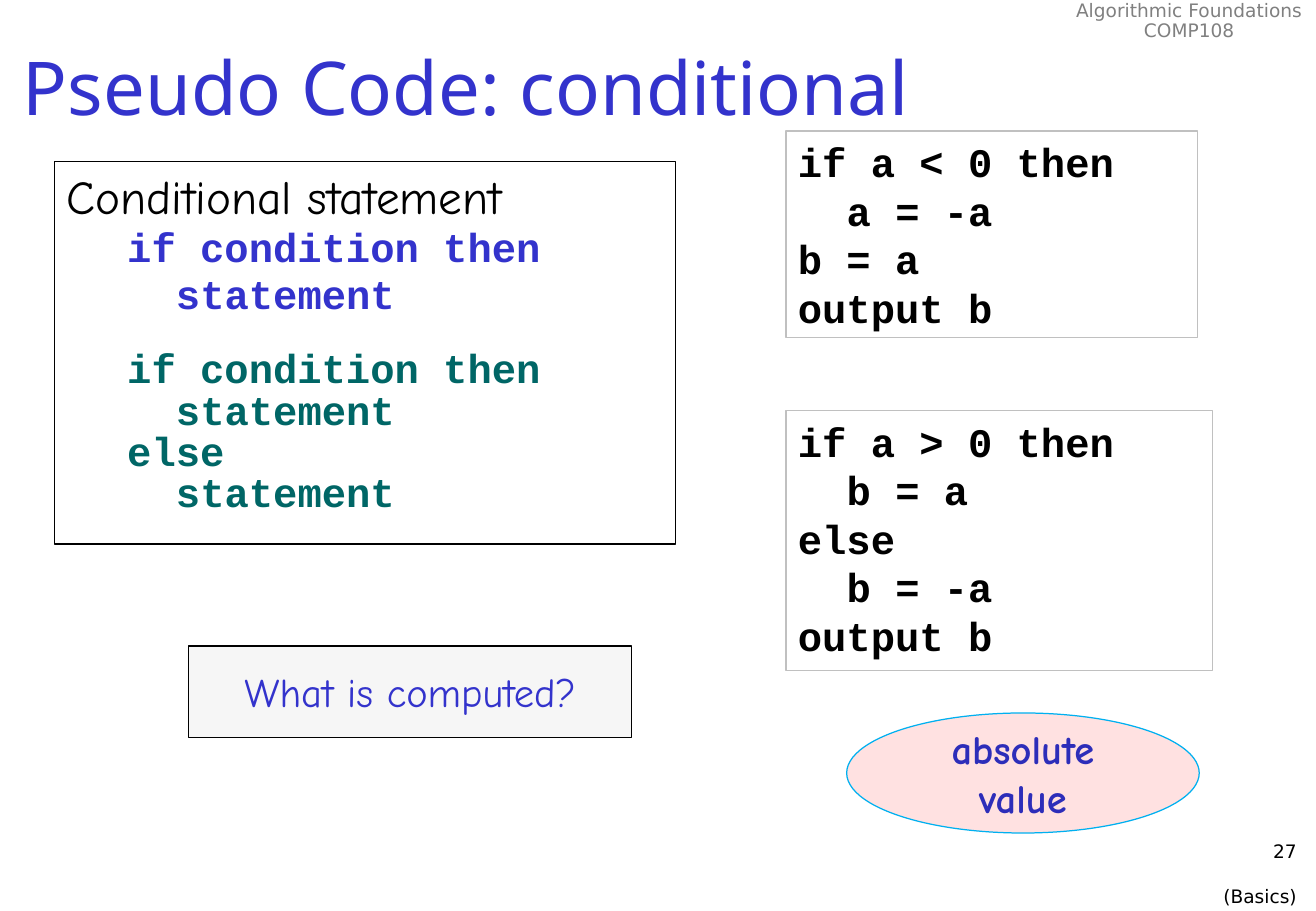
from pptx import Presentation
from pptx import util as u
from pptx.dml.color import RGBColor
from pptx.enum import shapes, text

ALIGN, ANCHOR = text.PP_ALIGN, text.MSO_ANCHOR
RECT, OVAL = shapes.MSO_SHAPE.RECTANGLE, shapes.MSO_SHAPE.OVAL
MONO, COMIC, SANS = "Courier New", "Comic Neue", "DejaVu Sans"
BLACK, BLUE, GREEN, GREY = "000000", "3333CC", "006666", "C0C0C0"
STEP = 1.02  # one level of code: two characters of 24 pt


def rgb(value):
    return RGBColor.from_string(value)


def write(tf, line, font, size, color, bold=False, align=ALIGN.LEFT,
          indent=0, spacing=None, before=0, after=0):
    p = tf.paragraphs[0]
    if p.runs:
        p = tf.add_paragraph()
    p.alignment = align
    p.space_before, p.space_after = u.Pt(before), u.Pt(after)
    if spacing:
        p.line_spacing = spacing
    if indent:
        p._p.get_or_add_pPr().set("marL", str(u.Cm(indent)))
    r = p.add_run()
    r.text = line
    r.font.name, r.font.size, r.font.bold = font, u.Pt(size), bold
    r.font.color.rgb = rgb(color)


prs = Presentation()
prs.slide_width, prs.slide_height = u.Cm(27.51), u.Cm(19.05)
s = prs.slides.add_slide(prs.slide_layouts[6])

# Text boxes: course header, page number, title
frames = {}
for name, box, wrap in [
    ("header", (22.22, -0.1, 5.28, 1.09), False),
    ("page", (21.62, 17.45, 5.74, 1.27), True),
    ("title", (0.23, 0.2, 27.28, 3.18), True),
]:
    tf = s.shapes.add_textbox(*map(u.Cm, box)).text_frame
    tf.word_wrap = wrap
    frames[name] = tf

for line in ("Algorithmic Foundations", "COMP108"):
    write(frames["header"], line, SANS, 11, "808080", align=ALIGN.CENTER, spacing=0.9)
write(frames["page"], "27", SANS, 11, BLACK, align=ALIGN.RIGHT)
write(frames["page"], "(Basics)", SANS, 11, BLACK, align=ALIGN.RIGHT, before=13)
frames["title"].vertical_anchor = ANCHOR.MIDDLE
write(frames["title"], "Pseudo Code: conditional", "Noto Sans", 44, BLUE)

# Outlined shapes
for name, kind, box, fill, line, anchor in [
    ("syntax", RECT, (1.14, 3.38, 12.98, 8), None, BLACK, ANCHOR.TOP),
    ("if else", RECT, (16.43, 8.59, 8.92, 5.44), None, GREY, ANCHOR.TOP),
    ("if", RECT, (16.43, 2.74, 8.61, 4.32), None, GREY, ANCHOR.TOP),
    ("question", RECT, (3.94, 13.51, 9.27, 1.91), "F6F6F6", BLACK, ANCHOR.MIDDLE),
    ("answer", OVAL, (17.7, 14.91, 7.37, 2.51), "FFE1E1", "00B0F0", ANCHOR.MIDDLE),
]:
    sp = s.shapes.add_shape(kind, *map(u.Cm, box))
    sp.shadow.inherit = False
    if fill:
        sp.fill.solid()
        sp.fill.fore_color.rgb = rgb(fill)
    else:
        sp.fill.background()
    sp.line.color.rgb = rgb(line)
    sp.line.width = u.Pt(0.75)
    tf = sp.text_frame
    tf.word_wrap = True
    tf.vertical_anchor = anchor
    frames[name] = tf

# Syntax of the conditional statement
write(frames["syntax"], "Conditional statement", COMIC, 28, BLACK, before=3, after=3)
for line, level, color, spacing, before, after in [
    ("if condition then", 0, BLUE, 0.85, 0, 0),
    ("statement", 1, BLUE, 0.9, 2.4, 19.2),
    ("if condition then", 0, GREEN, 0.85, 0, 0),
    ("statement", 1, GREEN, 0.85, 0, 0),
    ("else", 0, GREEN, 0.85, 0, 0),
    ("statement", 1, GREEN, 0.85, 0, 0),
]:
    write(frames["syntax"], line, MONO, 24, color, bold=True, spacing=spacing,
          indent=1.27 + level * STEP, before=before, after=after)

# Code examples
examples = {
    "if": [("if a < 0 then", 0), ("a = -a", 1), ("b = a", 0), ("output b", 0)],
    "if else": [("if a > 0 then", 0), ("b = a", 1), ("else", 0),
                ("b = -a", 1), ("output b", 0)],
}
for name, lines in examples.items():
    for line, level in lines:
        write(frames[name], line, MONO, 24, BLACK, bold=True, indent=level * STEP)

# Question and answer
write(frames["question"], "What is computed?", COMIC, 24, BLUE,
      align=ALIGN.CENTER, before=4.8)
write(frames["answer"], "absolute value", COMIC, 24, "2D2DB9",
      bold=True, align=ALIGN.CENTER)

prs.save("out.pptx")
